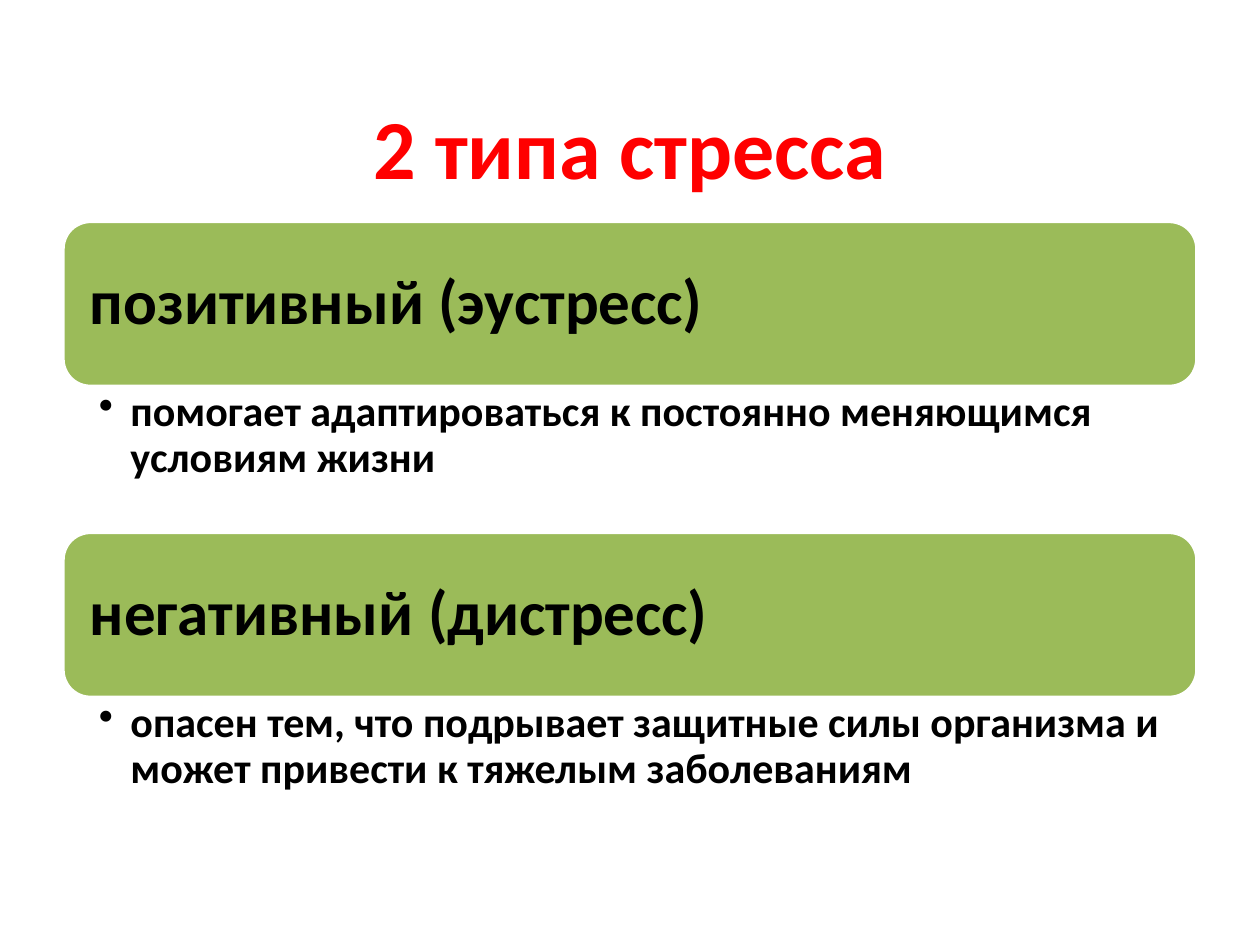
from dataclasses import dataclass

from lxml import etree
from pptx import Presentation
from pptx.dml.color import RGBColor
from pptx.enum.shapes import MSO_SHAPE
from pptx.enum.text import MSO_ANCHOR, PP_ALIGN
from pptx.oxml.ns import qn
from pptx.util import Pt

ROUNDED = MSO_SHAPE.ROUNDED_RECTANGLE
TOP, MIDDLE = MSO_ANCHOR.TOP, MSO_ANCHOR.MIDDLE
LEFT, CENTER = PP_ALIGN.LEFT, PP_ALIGN.CENTER


@dataclass(frozen=True)
class Theme:
    font: str = "Calibri"
    title_color: RGBColor = RGBColor(0xFF, 0x00, 0x00)
    text_color: RGBColor = RGBColor(0x00, 0x00, 0x00)
    panel_color: RGBColor = RGBColor(0x9B, 0xBB, 0x59)
    outline_color: RGBColor = RGBColor(0xFF, 0xFF, 0xFF)
    title_size: int = 48
    heading_size: int = 36
    detail_size: int = 24


def set_attributes(target, values):
    for name, value in values.items():
        setattr(target, name, value)


class SlideBuilder:
    def __init__(self, slide, theme):
        self.slide = slide
        self.theme = theme

    def fill_text(self, shape, text, size, color, margins, anchor=MIDDLE,
                  align=LEFT, spacing=0.9, bullet_indent=None):
        """Fill the shape with one bold paragraph; margins run left, top, right, bottom."""
        frame = shape.text_frame
        sides = ("margin_left", "margin_top", "margin_right", "margin_bottom")
        set_attributes(frame, {"word_wrap": True, "vertical_anchor": anchor})
        set_attributes(frame, {side: Pt(margin) for side, margin in zip(sides, margins)})
        para = frame.paragraphs[0]
        para.text = text
        set_attributes(para, {"alignment": align, "line_spacing": spacing})
        if bullet_indent:
            properties = para._p.get_or_add_pPr()
            properties.set("marL", str(Pt(bullet_indent)))
            properties.set("indent", str(-Pt(bullet_indent)))
            etree.SubElement(properties, qn("a:buChar")).set("char", "•")
        font = para.runs[0].font
        set_attributes(font, {"name": self.theme.font, "size": Pt(size), "bold": True})
        font.color.rgb = color

    def title(self, text, left, top, width, height):
        box = self.slide.shapes.add_textbox(Pt(left), Pt(top), Pt(width), Pt(height))
        self.fill_text(box, text, self.theme.title_size, self.theme.title_color,
                       (7.2, 3.6, 7.2, 3.6), align=CENTER, spacing=1.0)

    def heading_panel(self, text, left, top, width, height):
        panel = self.slide.shapes.add_shape(
            ROUNDED, Pt(left), Pt(top), Pt(width), Pt(height))
        panel.shadow.inherit = False
        panel.fill.solid()
        panel.fill.fore_color.rgb = self.theme.panel_color
        panel.line.color.rgb = self.theme.outline_color
        panel.line.width = Pt(2)
        self.fill_text(panel, text, self.theme.heading_size, self.theme.text_color,
                       (10.8,) * 4)

    def detail(self, text, left, top, width, height):
        box = self.slide.shapes.add_textbox(Pt(left), Pt(top), Pt(width), Pt(height))
        self.fill_text(box, text, self.theme.detail_size, self.theme.text_color,
                       (20.57, 2.4, 13.5, 2.4), anchor=TOP, bullet_indent=18)


STRESS_TYPES = (
    ("позитивный (эустресс)",
     "помогает адаптироваться к постоянно меняющимся условиям жизни"),
    ("негативный (дистресс)",
     "опасен тем, что подрывает защитные силы организма и "
     "может привести к тяжелым заболеваниям"),
)


def main():
    deck = Presentation()
    set_attributes(deck, {"slide_width": Pt(720), "slide_height": Pt(540)})
    builder = SlideBuilder(deck.slides.add_slide(deck.slide_layouts[6]), Theme())

    left, width = 36, 648
    first_top, panel_height, detail_height = 126.5, 94.3, 83.4
    builder.title("2 типа стресса", left, 55, width, 57)
    for index, (heading, detail) in enumerate(STRESS_TYPES):
        top = first_top + index * (panel_height + detail_height)
        builder.heading_panel(heading, left, top, width, panel_height)
        builder.detail(detail, left, top + panel_height, width, detail_height)
    deck.save("out.pptx")


if __name__ == "__main__":
    main()
